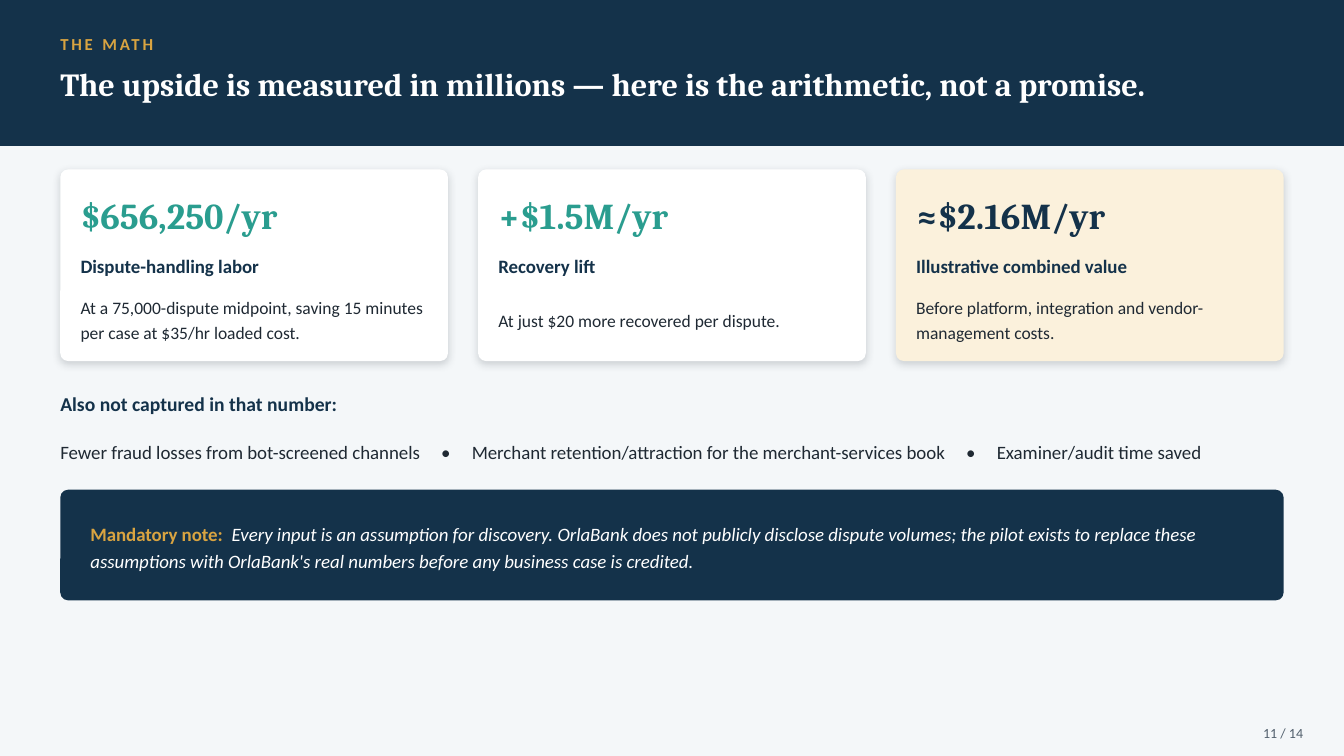
from lxml import etree
from pptx import Presentation
from pptx import util as u
from pptx.dml.color import RGBColor
from pptx.enum import shapes, text
from pptx.oxml import ns

NAVY, GOLD, TEAL, INK, WHITE = "14324A", "D9A441", "2A9D8F", "1F2933", "FFFFFF"
PAPER, CREAM, GREY = "F4F7F9", "FBF1DC", "52606D"
BODY, HEAD = "Calibri", "Cambria"

KICKER = "THE MATH"
TITLE = "The upside is measured in millions — here is the arithmetic, not a promise."
CARDS = [
    ("$656,250/yr", "Dispute-handling labor",
     "At a 75,000-dispute midpoint, saving 15 minutes per case at $35/hr loaded cost.",
     WHITE, TEAL),
    ("+$1.5M/yr", "Recovery lift",
     "At just $20 more recovered per dispute.", WHITE, TEAL),
    ("≈$2.16M/yr", "Illustrative combined value",
     "Before platform, integration and vendor-management costs.", CREAM, NAVY),
]
EXTRAS_HEADING = "Also not captured in that number:"
EXTRAS = ["Fewer fraud losses from bot-screened channels",
          "Merchant retention/attraction for the merchant-services book",
          "Examiner/audit time saved"]
EXTRAS_TABS = [9.6, 10.37, 22.83, 23.6]
NOTE_LABEL = "Mandatory note:"
NOTE = ("Every input is an assumption for discovery. OrlaBank does not publicly disclose "
        "dispute volumes; the pilot exists to replace these assumptions with OrlaBank's "
        "real numbers before any business case is credited.")
NOTE_TABS = [3.56]
PAGE = "11 / 14"

WIDTH, HEIGHT = 33.87, 19.05
MARGIN, GAP, PAD, RADIUS = 1.52, 0.76, 0.51, 0.2
CONTENT = WIDTH - 2 * MARGIN
CARD_TOP, CARD_HEIGHT = 4.27, 4.83
CARD_WIDTH = (CONTENT - GAP * (len(CARDS) - 1)) / len(CARDS)
NOTE_TOP, NOTE_HEIGHT = 12.34, 2.79

deck = Presentation()
deck.slide_width, deck.slide_height = u.Cm(WIDTH), u.Cm(HEIGHT)
slide = deck.slides.add_slide(deck.slide_layouts[6])


def paint(fill, colour):
    fill.solid()
    fill.fore_color.rgb = RGBColor.from_string(colour)


def panel(left, top, width, height, colour, rounded=True, shadow=False):
    kind = shapes.MSO_SHAPE.ROUNDED_RECTANGLE if rounded else shapes.MSO_SHAPE.RECTANGLE
    block = slide.shapes.add_shape(kind, *map(u.Cm, (left, top, width, height)))
    paint(block.fill, colour)
    block.line.fill.background()
    block.shadow.inherit = False
    if rounded:
        block.adjustments[0] = RADIUS / height
    if shadow:
        effects = block._element.spPr.find(ns.qn("a:effectLst"))
        outer = etree.SubElement(effects, ns.qn("a:outerShdw"), blurRad=str(u.Pt(6)),
                                 dist=str(u.Pt(2)), dir="5400000", rotWithShape="0")
        tint = etree.SubElement(outer, ns.qn("a:srgbClr"), val=INK)
        etree.SubElement(tint, ns.qn("a:alpha"), val="18000")


def write(left, top, width, height, runs, size, font=BODY, spacing=None, tracking=None,
          tabs=(), anchor=text.MSO_ANCHOR.MIDDLE, align=None):
    frame = slide.shapes.add_textbox(*map(u.Cm, (left, top, width, height))).text_frame
    frame.word_wrap = True
    frame.vertical_anchor = anchor
    frame.margin_left = frame.margin_right = frame.margin_top = frame.margin_bottom = 0
    line = frame.paragraphs[0]
    if tabs:
        stops = etree.SubElement(line._p.get_or_add_pPr(), ns.qn("a:tabLst"))
        for stop in tabs:
            etree.SubElement(stops, ns.qn("a:tab"), pos=str(u.Cm(stop)), algn="l")
    if spacing:
        line.line_spacing = spacing
    if align:
        line.alignment = align
    for words, colour, bold, italic in runs:
        run = line.add_run()
        run.text = words
        run.font.name, run.font.size = font, u.Pt(size)
        run.font.bold, run.font.italic = bold, italic
        paint(run.font.fill, colour)
        if tracking:
            run.font._element.set("spc", str(tracking * 100))


paint(slide.background.fill, PAPER)
panel(0, 0, WIDTH, 3.68, NAVY, rounded=False)
write(MARGIN, 0.71, CONTENT, 0.81, [(KICKER, GOLD, True, False)], 12, tracking=2)
write(MARGIN, 1.57, CONTENT, 1.98, [(TITLE, WHITE, True, False)], 23, HEAD,
      spacing=1.05, anchor=text.MSO_ANCHOR.TOP)

for column, (amount, label, basis, fill, accent) in enumerate(CARDS):
    left = MARGIN + column * (CARD_WIDTH + GAP)
    inner, room = left + PAD, CARD_WIDTH - 2 * PAD
    panel(left, CARD_TOP, CARD_WIDTH, CARD_HEIGHT, fill, shadow=True)
    write(inner, CARD_TOP + 0.38, room, 1.52, [(amount, accent, True, False)], 26, HEAD)
    write(inner, CARD_TOP + 1.98, room, 0.89, [(label, NAVY, True, False)], 13.5)
    write(inner, CARD_TOP + 2.84, room, 1.83, [(basis, INK, False, False)], 12.5, spacing=1.15)

write(MARGIN, 9.8, CONTENT, 0.76, [(EXTRAS_HEADING, NAVY, True, False)], 14)
write(MARGIN, 10.62, CONTENT, 1.4, [("\t•\t".join(EXTRAS), INK, False, False)], 13.5,
      spacing=1.2, tabs=EXTRAS_TABS)

panel(MARGIN, NOTE_TOP, CONTENT, NOTE_HEIGHT, NAVY)
write(MARGIN + GAP, NOTE_TOP, CONTENT - 2 * GAP, NOTE_HEIGHT,
      [(NOTE_LABEL + "\t", GOLD, True, False), (NOTE, WHITE, False, True)], 13.5,
      spacing=1.2, tabs=NOTE_TABS)

write(29.79, 18.08, 3.05, 0.76, [(PAGE, GREY, False, False)], 10, align=text.PP_ALIGN.RIGHT)

deck.save("out.pptx")
